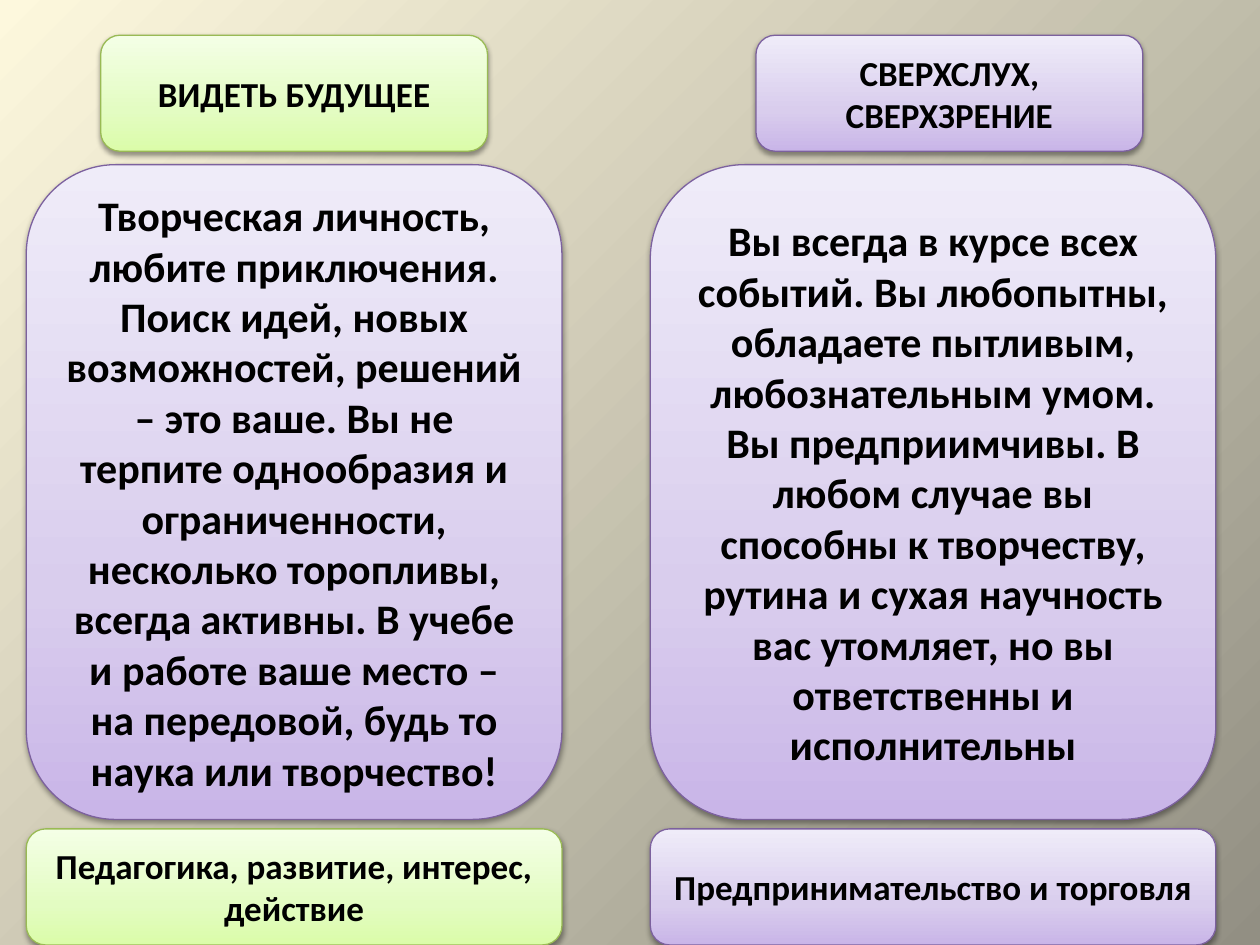
from lxml.etree import SubElement
from pptx import Presentation
from pptx.dml.color import RGBColor
from pptx.enum.shapes import MSO_SHAPE
from pptx.enum.text import MSO_ANCHOR, PP_ALIGN
from pptx.oxml.ns import qn
from pptx.util import Cm, Pt

BLACK = RGBColor(0x00, 0x00, 0x00)
GREEN_LINE = RGBColor(0x99, 0xBA, 0x54)
PURPLE_LINE = RGBColor(0x7C, 0x61, 0x9E)
BACKGROUND = [(0, RGBColor(0xFD, 0xF8, 0xDD)), (100, RGBColor(0x92, 0x8F, 0x83))]
GREEN = [(0, RGBColor(0xDB, 0xFC, 0xA9)), (35, RGBColor(0xE3, 0xFC, 0xC2)),
         (100, RGBColor(0xF4, 0xFF, 0xE6))]
PURPLE = [(0, RGBColor(0xC9, 0xB5, 0xE8)), (35, RGBColor(0xD9, 0xCD, 0xED)),
          (100, RGBColor(0xEF, 0xEC, 0xF9))]

# Rows: top, height (cm), text size (pt)
ROWS = {
    "title": (0.71, 2.34, 20),
    "description": (3.32, 13.2, 24),
    "careers": (16.71, 2.34, 20),
}
# Columns: left and width (cm) of the title and of the boxes below it
COLUMNS = [
    {
        "title_span": (2.03, 7.8), "box_span": (0.53, 10.8),
        "accent": (GREEN, GREEN_LINE),
        "title": "ВИДЕТЬ БУДУЩЕЕ",
        "description": "Творческая личность, любите приключения. Поиск идей, новых "
                       "возможностей, решений – это ваше. Вы не терпите однообразия и "
                       "ограниченности, несколько торопливы, всегда активны. В учебе и "
                       "работе ваше место – на передовой, будь то наука или творчество!",
        "careers": "Педагогика, развитие, интерес, действие",
    },
    {
        "title_span": (15.24, 7.8), "box_span": (13.11, 11.4),
        "accent": (PURPLE, PURPLE_LINE),
        "title": "СВЕРХСЛУХ, СВЕРХЗРЕНИЕ",
        "description": "Вы всегда в курсе всех событий. Вы любопытны, обладаете пытливым, "
                       "любознательным умом. Вы предприимчивы. В любом случае вы способны "
                       "к творчеству, рутина и сухая научность вас утомляет, но вы "
                       "ответственны и исполнительны",
        "careers": "Предпринимательство и торговля",
    },
]


def set_gradient(fill, element, stops, angle):
    """Give fill, which lives inside element, any number of stops."""
    fill.gradient()
    fill.gradient_angle = angle
    stop_list = next(element.iter(qn("a:gsLst")))
    stop_list.clear()
    for percent, color in stops:
        stop = SubElement(stop_list, qn("a:gs"), pos=str(percent * 1000))
        SubElement(stop, qn("a:srgbClr"), val=str(color))


def add_soft_shadow(sp):
    sp.shadow.inherit = False
    effects = sp._element.spPr.find(qn("a:effectLst"))
    shadow = SubElement(effects, qn("a:outerShdw"), blurRad=str(Pt(3.1)),
                        dist=str(Pt(1.6)), dir="5400000", rotWithShape="0")
    color = SubElement(shadow, qn("a:srgbClr"), val=str(BLACK))
    SubElement(color, qn("a:alpha"), val="38000")


def add_card(s, span, row, text, stops, line_color):
    left, width = span
    top, height, size = row
    sp = s.shapes.add_shape(MSO_SHAPE.ROUNDED_RECTANGLE,
                            Cm(left), Cm(top), Cm(width), Cm(height))
    set_gradient(sp.fill, sp._element, stops, 90)
    sp.line.color.rgb = line_color
    sp.line.width = Pt(0.75)
    add_soft_shadow(sp)
    tf = sp.text_frame
    tf.word_wrap = True
    tf.vertical_anchor = MSO_ANCHOR.MIDDLE
    p = tf.paragraphs[0]
    p.alignment = PP_ALIGN.CENTER
    r = p.add_run()
    r.text = text
    for name, value in {"name": "Calibri", "size": Pt(size), "bold": True}.items():
        setattr(r.font, name, value)
    r.font.color.rgb = BLACK


def main():
    prs = Presentation()
    prs.slide_width, prs.slide_height = Cm(25.4), Cm(19.05)
    s = prs.slides.add_slide(prs.slide_layouts[6])
    set_gradient(s.background.fill, s._element, BACKGROUND, 315)
    for key, row in ROWS.items():
        for column in COLUMNS:
            span = column["title_span" if key == "title" else "box_span"]
            style = (PURPLE, PURPLE_LINE) if key == "description" else column["accent"]
            add_card(s, span, row, column[key], *style)
    prs.save("out.pptx")


if __name__ == "__main__":
    main()
